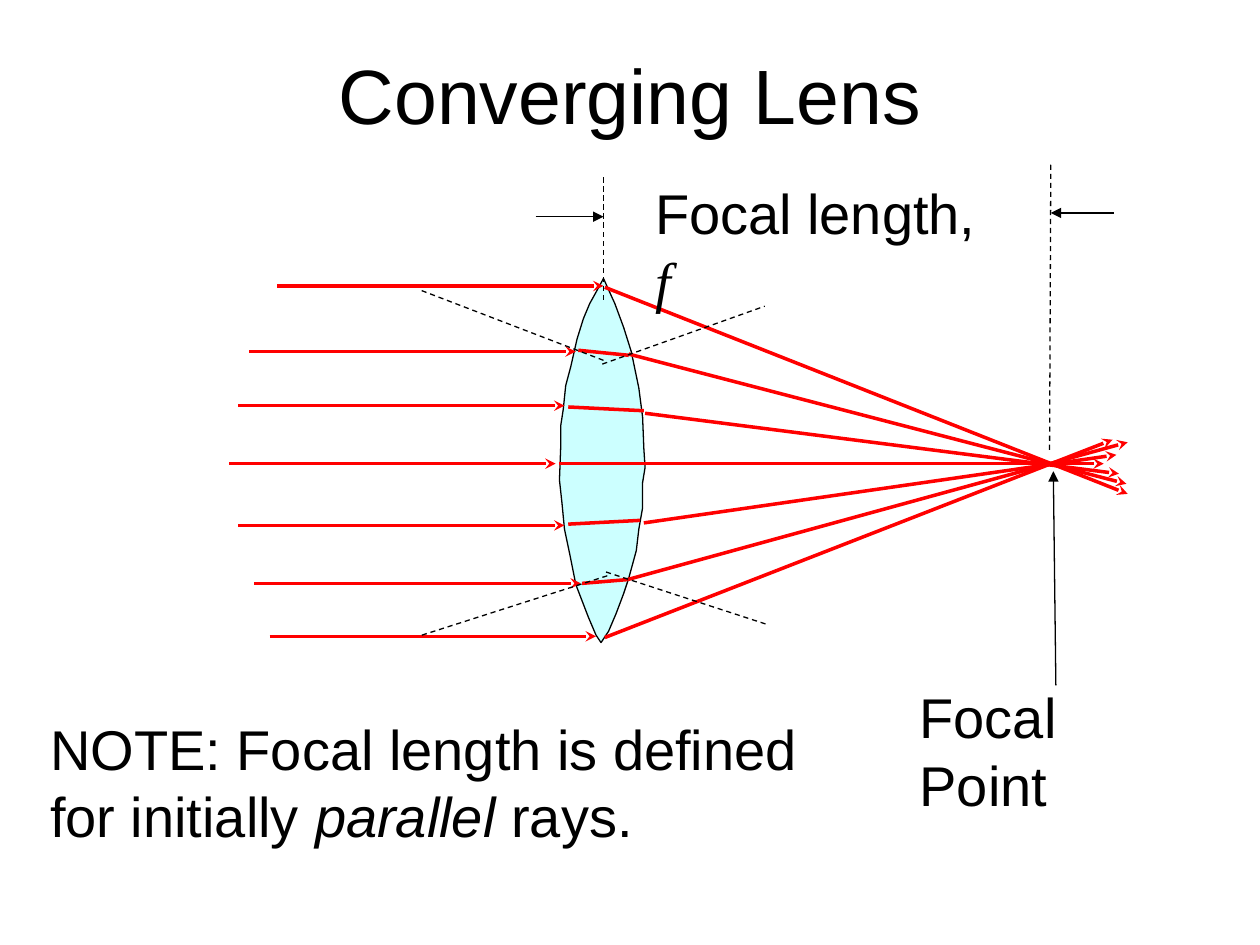
from dataclasses import dataclass
from typing import NamedTuple, Optional

from lxml.etree import SubElement
from pptx import Presentation
from pptx.dml.color import RGBColor
from pptx.enum.dml import MSO_LINE
from pptx.enum.shapes import MSO_CONNECTOR as Connector
from pptx.enum.text import MSO_ANCHOR as Anchor, PP_ALIGN as Align
from pptx.oxml.ns import qn
from pptx.util import Inches, Pt

COLUMNS, ROWS = 100, 75
CELL = Inches(0.1)


@dataclass(frozen=True)
class Theme:
    ink: RGBColor = RGBColor(0, 0, 0)
    ray: RGBColor = RGBColor(0xFF, 0, 0)
    glass: RGBColor = RGBColor(0xCC, 0xFF, 0xFF)
    font: str = "Arial"
    symbol_font: str = "Times New Roman"
    title_size: int = 44
    body_size: int = 32
    ray_width: float = 2
    thin_width: float = 0.75


THEME = Theme()


class Point(NamedTuple):
    column: float
    row: float


class Frame(NamedTuple):
    column: float
    row: float
    width: float
    height: float


class Span(NamedTuple):
    text: str
    italic: bool = False
    font: str = THEME.font


@dataclass(frozen=True)
class Stroke:
    color: RGBColor = THEME.ink
    width: float = THEME.thin_width
    dashed: bool = False
    arrow: Optional[str] = None


RAY = Stroke(THEME.ray, THEME.ray_width)
RAY_ARROW = Stroke(THEME.ray, THEME.ray_width, arrow="stealth")
DASHES = Stroke(dashed=True)
POINTER = Stroke(arrow="triangle")

LENS_OUTLINE = [Point(*pair) for pair in (
    (47.7, 51), (48.3, 50.1), (48.9, 48.7), (49.5, 47.1), (49.9, 45.9),
    (50.5, 43.7), (50.7, 42), (51, 40.3), (51, 38.3), (51.2, 37.1),
    (51.1, 35.6), (51, 33.1), (50.7, 30.8), (50.1, 27.9), (49.5, 26),
    (48.8, 24.1), (48.3, 23), (47.9, 22.1), (47.3, 23.2), (46.8, 24.1),
    (46.3, 25.3), (45.8, 26.9), (45.3, 29.1), (44.9, 30.6), (44.7, 32.5),
    (44.5, 33.8), (44.5, 35.5), (44.4, 38.1), (44.6, 39.9), (44.8, 42),
    (45.2, 43.9), (45.7, 46.4), (46.2, 47.7), (46.7, 49), (47.3, 50.4),
)]

INCOMING_LENGTH = 25.9
INCOMING_TIPS = [Point(*pair) for pair in (
    (47.9, 22.7), (45.7, 27.9), (44.8, 32.2), (44.1, 36.8),
    (44.8, 41.7), (46.1, 46.3), (47.3, 50.5),
)]

LINES = {
    RAY: [
        (45.9, 27.8, 49.9, 28.2), (45.1, 32.3, 51.1, 32.6),
        (45.1, 41.6, 50.8, 41.3), (46.2, 46.3, 49.8, 46),
    ],
    RAY_ARROW: [
        (48, 22.8, 89.5, 39.2), (49.9, 28.1, 89.4, 38.4),
        (51.2, 32.8, 88.8, 37.6), (44.4, 36.8, 87.6, 36.8),
        (51.1, 41.5, 88.6, 36.1), (49.8, 46, 89.5, 35.1),
        (48, 50.6, 88.3, 34.9),
    ],
    DASHES: [
        (47.9, 28.6, 33.3, 23), (47.8, 28.9, 60.7, 24.3),
        (48.2, 45.7, 33.2, 50.5), (48.1, 45.4, 61, 49.6),
        (47.9, 23.8, 47.9, 13.8), (83.3, 35.7, 83.4, 13),
    ],
    POINTER: [
        (42.5, 17.2, 47.9, 17.2), (88.4, 16.9, 83.4, 16.9),
        (83.8, 54.4, 83.6, 37.4),
    ],
}

LABELS = [
    (Frame(72, 53.7, 23.8, 11.8), [Span("Focal Point")]),
    (Frame(51, 13.7, 29.5, 11.8),
     [Span("Focal length, "), Span("f", True, THEME.symbol_font)]),
    (Frame(3, 56.2, 64, 11.8),
     [Span("NOTE: Focal length is defined for initially "),
      Span("parallel ", True), Span("rays.")]),
]


def cells(count: float) -> int:
    """Length of a number of grid cells."""
    return round(count * CELL)


def place(box, frame: Frame) -> None:
    box.left, box.top, box.width, box.height = map(cells, frame)


def write(box, spans: list[Span], *, size: int = THEME.body_size,
          align: Align = Align.LEFT, anchor: Anchor = Anchor.TOP) -> None:
    text_frame = box.text_frame
    text_frame.word_wrap = True
    text_frame.vertical_anchor = anchor
    para = text_frame.paragraphs[0]
    para.alignment = align
    for span in spans:
        run = para.add_run()
        run.text = span.text
        run.font.name = span.font
        run.font.size = Pt(size)
        run.font.italic = span.italic
        run.font.color.rgb = THEME.ink


def draw_line(page, start: Point, end: Point, stroke: Stroke) -> None:
    connector = page.shapes.add_connector(
        Connector.STRAIGHT, *map(cells, (*start, *end)))
    line = connector.line
    line.color.rgb = stroke.color
    line.width = Pt(stroke.width)
    if stroke.dashed:
        line.dash_style = MSO_LINE.DASH
    properties = connector.element.spPr
    if stroke.arrow:
        SubElement(properties.find(qn("a:ln")), qn("a:tailEnd"), type=stroke.arrow)
    SubElement(properties, qn("a:effectLst"))


def draw_lens(page) -> None:
    outline = [tuple(map(cells, point)) for point in LENS_OUTLINE]
    builder = page.shapes.build_freeform(*outline[0])
    builder.add_line_segments(outline[1:], close=True)
    lens = builder.convert_to_shape()
    lens.shadow.inherit = False
    lens.fill.solid()
    lens.fill.fore_color.rgb = THEME.glass
    lens.line.color.rgb = THEME.ink
    lens.line.width = Pt(THEME.thin_width)


def main() -> None:
    deck = Presentation()
    deck.slide_width, deck.slide_height = cells(COLUMNS), cells(ROWS)
    page = deck.slides.add_slide(deck.slide_layouts.get_by_name("Title Only"))
    title = page.shapes.title
    place(title, Frame(5, 3, 90, 8.8))
    write(title, [Span("Converging Lens")], size=THEME.title_size,
          align=Align.CENTER, anchor=Anchor.MIDDLE)
    draw_lens(page)
    for tip in INCOMING_TIPS:
        draw_line(page, Point(tip.column - INCOMING_LENGTH, tip.row), tip, RAY_ARROW)
    for stroke, lines in LINES.items():
        for x1, y1, x2, y2 in lines:
            draw_line(page, Point(x1, y1), Point(x2, y2), stroke)
    for frame, spans in LABELS:
        write(page.shapes.add_textbox(*map(cells, frame)), spans)
    deck.save("out.pptx")


if __name__ == "__main__":
    main()
